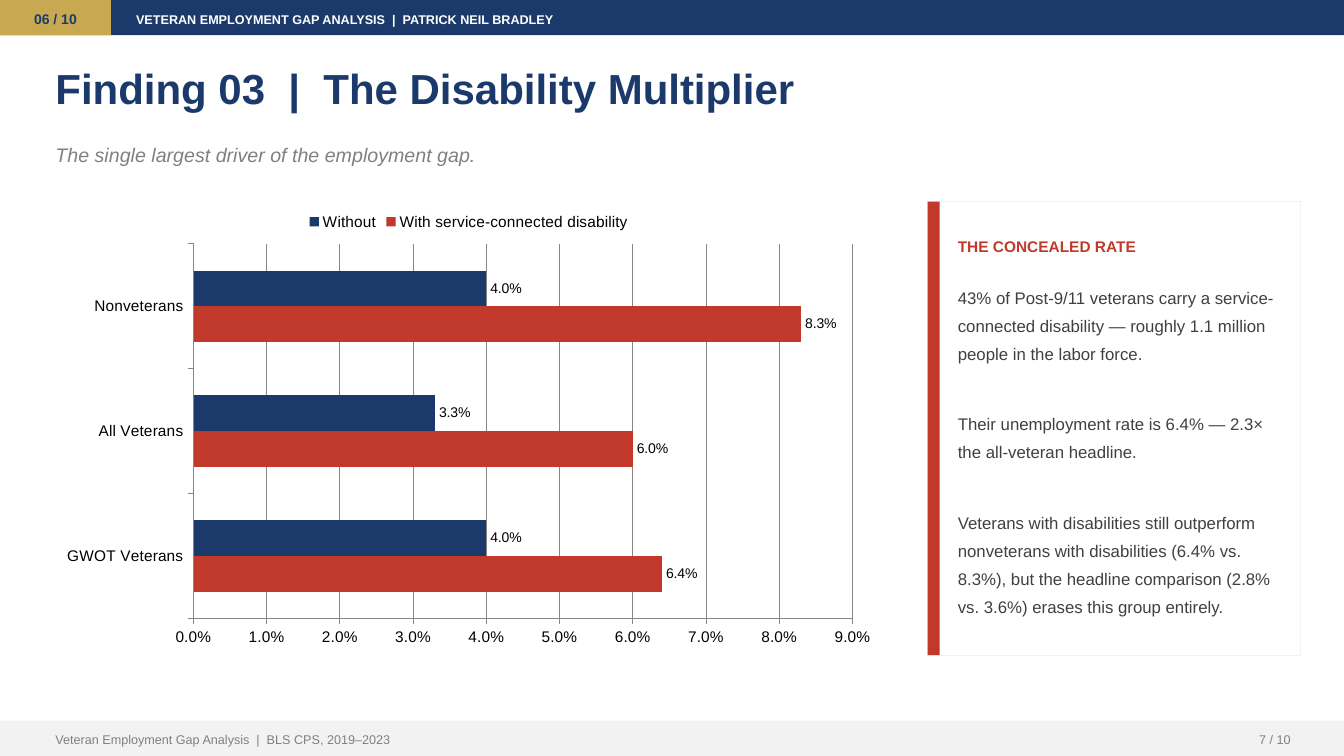
from dataclasses import dataclass

from lxml import etree
from pptx import Presentation
from pptx.chart.data import CategoryChartData
from pptx.dml.color import RGBColor
from pptx.enum.chart import XL_CHART_TYPE, XL_LABEL_POSITION, XL_LEGEND_POSITION, XL_TICK_MARK
from pptx.enum.shapes import MSO_SHAPE
from pptx.enum.text import MSO_ANCHOR, MSO_AUTO_SIZE, PP_ALIGN
from pptx.oxml.ns import qn
from pptx.util import Inches, Pt

RECTANGLE = MSO_SHAPE.RECTANGLE
TOP, MIDDLE = MSO_ANCHOR.TOP, MSO_ANCHOR.MIDDLE
LEFT, CENTER, RIGHT = PP_ALIGN.LEFT, PP_ALIGN.CENTER, PP_ALIGN.RIGHT
NO_AUTOFIT = MSO_AUTO_SIZE.NONE
BAR_CLUSTERED = XL_CHART_TYPE.BAR_CLUSTERED
LEGEND_TOP = XL_LEGEND_POSITION.TOP
OUTSIDE_END = XL_LABEL_POSITION.OUTSIDE_END
TICK_OUTSIDE, TICK_NONE = XL_TICK_MARK.OUTSIDE, XL_TICK_MARK.NONE


@dataclass(frozen=True)
class Theme:
    font: str = "Arial"
    navy: str = "1B3A6B"
    gold: str = "C8A951"
    red: str = "C0392B"
    white: str = "FFFFFF"
    pale: str = "F2F2F2"
    muted: str = "808080"
    text: str = "404040"
    black: str = "000000"
    grid: str = "868686"
    title: int = 30
    subtitle: int = 14
    body: int = 12
    heading: int = 11
    label: int = 10
    small: int = 9


class SlideBuilder:
    def __init__(self, slide, theme):
        self.slide = slide
        self.theme = theme

    def style_font(self, font, size, color, bold=False, italic=False):
        font.name = self.theme.font
        font.size = Pt(size)
        font.bold = bold
        font.italic = italic
        font.color.rgb = RGBColor.from_string(color)

    def rectangle(self, left, top, width, height, fill, line=None):
        shape = self.slide.shapes.add_shape(
            RECTANGLE, Inches(left), Inches(top), Inches(width), Inches(height))
        shape.shadow.inherit = False
        shape.fill.solid()
        shape.fill.fore_color.rgb = RGBColor.from_string(fill)
        if line:
            shape.line.color.rgb = RGBColor.from_string(line)
            shape.line.width = Pt(0.75)
        else:
            shape.line.fill.background()
        return shape

    def set_text(self, shape, paragraphs, size, color, bold=False, italic=False,
                 align=LEFT, anchor=TOP, spacing=1.2, gap=0):
        frame = shape.text_frame
        frame.word_wrap = True
        frame.auto_size = NO_AUTOFIT
        frame.vertical_anchor = anchor
        frame.margin_left = frame.margin_right = Inches(0.05)
        frame.margin_top = frame.margin_bottom = Inches(0.02)
        frame.text = "\n".join(paragraphs)
        for index, paragraph in enumerate(frame.paragraphs):
            paragraph.alignment = align
            paragraph.line_spacing = spacing
            paragraph.space_before = Pt(gap if index else 0)
            if shape.is_placeholder:
                properties = paragraph._p.get_or_add_pPr()
                properties.set("marL", "0")
                properties.set("indent", "0")
                etree.SubElement(properties, qn("a:buNone"))
            self.style_font(paragraph.font, size, color, bold, italic)

    def text(self, left, top, width, height, words, size, color, **style):
        box = self.slide.shapes.add_textbox(
            Inches(left), Inches(top), Inches(width), Inches(height))
        self.set_text(box, [words], size, color, **style)

    def placeholder(self, shape, left, top, width, height, paragraphs, size, color, **style):
        shape.left, shape.top = Inches(left), Inches(top)
        shape.width, shape.height = Inches(width), Inches(height)
        self.set_text(shape, paragraphs, size, color, **style)

    def bar_chart(self, left, top, width, height, categories, series_list):
        theme = self.theme
        data = CategoryChartData(number_format="0.0%")
        data.categories = categories
        for name, values, _ in series_list:
            data.add_series(name, values)
        chart = self.slide.shapes.add_chart(
            BAR_CLUSTERED, Inches(left), Inches(top), Inches(width), Inches(height), data).chart
        self.style_font(chart.font, theme.heading, theme.black)
        chart.has_title = False
        chart.has_legend = True
        chart.legend.position = LEGEND_TOP
        chart.legend.include_in_layout = False
        self.style_font(chart.legend.font, theme.heading, theme.black)
        grid_color = RGBColor.from_string(theme.grid)
        for axis in (chart.category_axis, chart.value_axis):
            axis.major_tick_mark = TICK_OUTSIDE
            axis.minor_tick_mark = TICK_NONE
            axis.format.line.color.rgb = grid_color
            self.style_font(axis.tick_labels.font, theme.heading, theme.black)
        value_axis = chart.value_axis
        value_axis.minimum_scale, value_axis.maximum_scale = 0, 0.09
        value_axis.major_unit = 0.01
        value_axis.tick_labels.number_format = "0.0%"
        value_axis.tick_labels.number_format_is_linked = False
        value_axis.has_major_gridlines = True
        value_axis.major_gridlines.format.line.color.rgb = grid_color
        plot = chart.plots[0]
        plot.vary_by_categories = False
        plot.gap_width = 150
        for series, (_, _, color) in zip(plot.series, series_list):
            series.format.fill.solid()
            series.format.fill.fore_color.rgb = RGBColor.from_string(color)
            labels = series.data_labels
            labels.show_value = True
            labels.number_format = "0.0%"
            labels.number_format_is_linked = False
            labels.position = OUTSIDE_END
            self.style_font(labels.font, theme.label, theme.black)


def main():
    theme = Theme()
    presentation = Presentation()
    presentation.slide_width, presentation.slide_height = Inches(13.33), Inches(7.5)
    slide = presentation.slides.add_slide(presentation.slide_layouts[1])
    builder = SlideBuilder(slide, theme)

    band = 0.35
    builder.rectangle(0, 0, 13.33, band, theme.navy)
    builder.rectangle(0, 0, 1.1, band, theme.gold)
    builder.text(0, 0, 1.1, band, "06 / 10", theme.label, theme.navy,
                 bold=True, align=CENTER, anchor=MIDDLE)
    builder.text(1.3, 0, 11, band, "VETERAN EMPLOYMENT GAP ANALYSIS  |  PATRICK NEIL BRADLEY",
                 theme.small, theme.white, bold=True, anchor=MIDDLE)

    builder.placeholder(slide.shapes.title, 0.5, 0.55, 12.3, 0.9,
                        ["Finding 03  |  The Disability Multiplier"],
                        theme.title, theme.navy, bold=True, spacing=1.1)
    builder.text(0.5, 1.35, 12.3, 0.5, "The single largest driver of the employment gap.",
                 theme.subtitle, theme.muted, italic=True)

    builder.bar_chart(0.5, 2, 8.3, 4.5, ["GWOT Veterans", "All Veterans", "Nonveterans"], [
        ("With service-connected disability", (0.064, 0.06, 0.083), theme.red),
        ("Without", (0.04, 0.033, 0.04), theme.navy),
    ])

    builder.rectangle(9.2, 2, 3.7, 4.5, theme.white, line=theme.pale)
    stripe = builder.rectangle(9.2, 2, 0.12, 4.5, theme.red)
    builder.text(9.45, 2.3, 3.3, 0.4, "THE CONCEALED RATE", theme.heading, theme.red, bold=True)
    body = slide.placeholders[1]
    stripe.element.addnext(body.element)
    builder.placeholder(body, 9.45, 2.75, 3.3, 3.5, [
        "43% of Post-9/11 veterans carry a service-connected disability — "
        "roughly 1.1 million people in the labor force.",
        "Their unemployment rate is 6.4% — 2.3× the all-veteran headline.",
        "Veterans with disabilities still outperform nonveterans with disabilities "
        "(6.4% vs. 8.3%), but the headline comparison (2.8% vs. 3.6%) erases this group entirely.",
    ], theme.body, theme.text, spacing=1.4, gap=30)

    footer_top = 7.5 - band
    builder.rectangle(0, footer_top, 13.33, band, theme.pale)
    builder.text(0.5, footer_top, 8, band, "Veteran Employment Gap Analysis  |  BLS CPS, 2019–2023",
                 theme.small, theme.muted, anchor=MIDDLE)
    builder.text(11.7, footer_top, 1.15, band, "7 / 10", theme.small, theme.muted,
                 align=RIGHT, anchor=MIDDLE)
    presentation.save("out.pptx")


if __name__ == "__main__":
    main()
